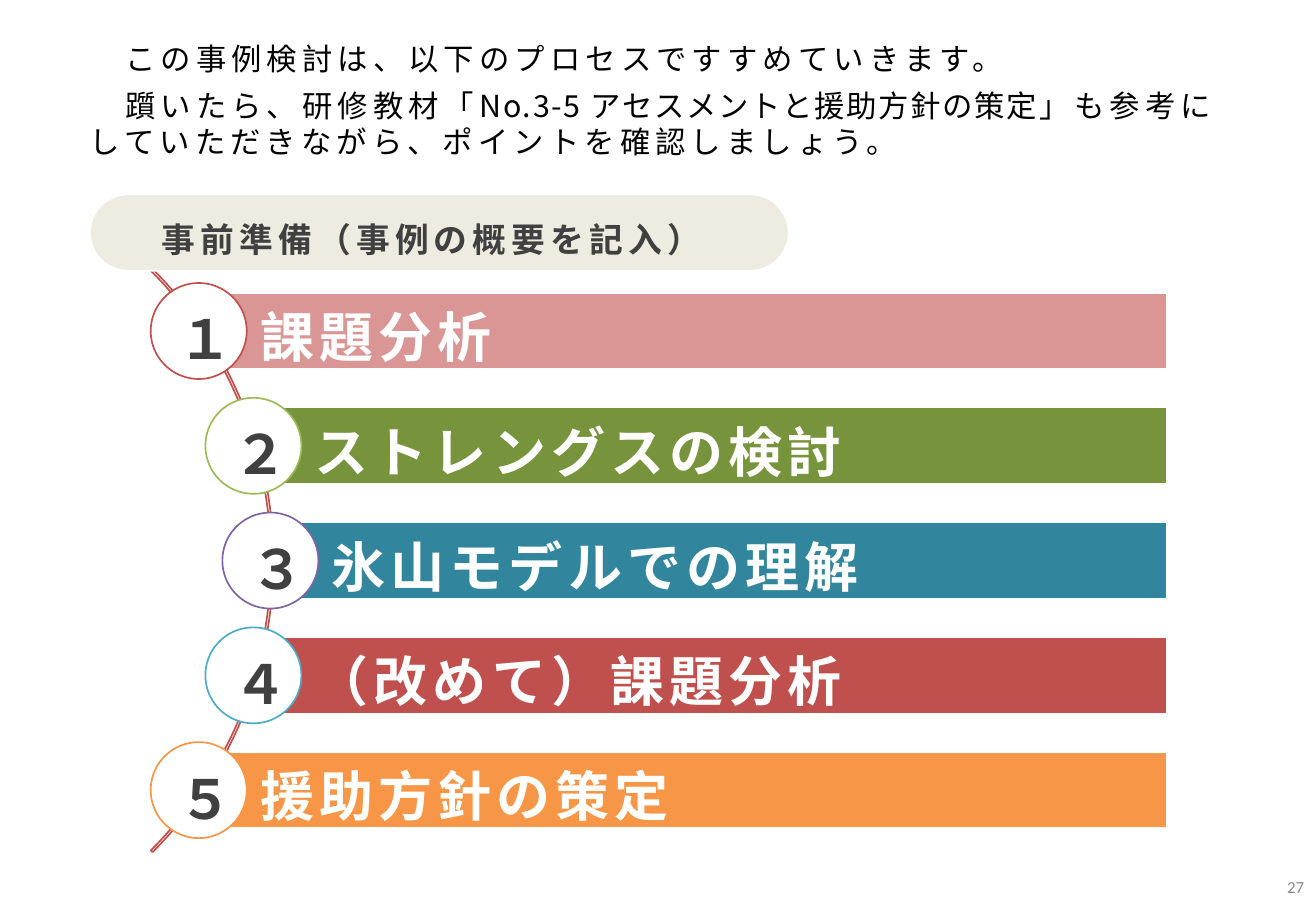
from dataclasses import dataclass

from lxml import etree
from pptx import Presentation
from pptx import util as u
from pptx.dml import color
from pptx.enum import shapes, text
from pptx.oxml import ns


@dataclass(frozen=True)
class Theme:
    japanese: str = "Noto Sans CJK JP"
    latin: str = "Calibri"
    black: str = "000000"
    white: str = "FFFFFF"
    dark: str = "404040"
    grey: str = "898989"
    beige: str = "EEECE1"
    red: str = "C0504D"
    step_size: int = 32
    heading_size: int = 20
    body_size: int = 18
    page_size: int = 10
    wide: int = 3
    narrow: int = 1


THEME = Theme()

INTRO = [
    [("　この事例検討は、以下のプロセスですすめていきます。", THEME.wide)],
    [
        ("　躓いたら、研修教材「", THEME.wide),
        ("No.3-5 アセスメントと援助方針の策定", THEME.narrow),
        ("」も参考にしていただきながら、ポイントを確認しましょう。", THEME.wide),
    ],
]

STEPS = [
    ("１", "課題分析", 1.64, "D99694", THEME.red),
    ("２", "ストレングスの検討", 2.09, "77933C", "9BBB59"),
    ("３", "氷山モデルでの理解", 2.23, "31859C", "8064A2"),
    ("４", "（改めて）課題分析", 2.09, THEME.red, "4BACC6"),
    ("５", "援助方針の策定", 1.64, "F79646", "F79646"),
]

FIRST_TOP, LAST_TOP = 2.41, 6.19
STEP_PITCH = (LAST_TOP - FIRST_TOP) / (len(STEPS) - 1)
BAR_RIGHT, BAR_HEIGHT = 9.6, 0.63
CIRCLE_SIZE = 0.79


def rgb(value):
    return color.RGBColor.from_string(value)


def add_run(paragraph, words, size, ink, bold=False, spacing=0, font=THEME.japanese):
    run = paragraph.add_run()
    run.text = words
    run.font.name = font
    run.font.size = u.Pt(size)
    run.font.bold = bold
    run.font.color.rgb = rgb(ink)
    properties = run._r.get_or_add_rPr()
    properties.set("spc", str(spacing * 100))
    latin = properties.find(ns.qn("a:latin"))
    east_asian = etree.Element(ns.qn("a:ea"), typeface=font)
    latin.addnext(east_asian)


def add_outlined(slide, kind, box, line, fill=None):
    shape = slide.shapes.add_shape(kind, *map(u.Inches, box))
    shape.shadow.inherit = False
    if fill:
        shape.fill.solid()
        shape.fill.fore_color.rgb = rgb(fill)
    else:
        shape.fill.background()
    shape.line.color.rgb = rgb(line)
    shape.line.width = u.Pt(1)
    return shape


def add_banner(slide, kind, box, fill, words, size, ink):
    shape = add_outlined(slide, kind, box, THEME.white, fill)
    frame = shape.text_frame
    frame.word_wrap = True
    frame.vertical_anchor = text.MSO_ANCHOR.MIDDLE
    frame.margin_left, frame.margin_top = u.Inches(0.5), u.Inches(0.24)
    frame.margin_right = frame.margin_bottom = u.Inches(0.09)
    paragraph = frame.paragraphs[0]
    paragraph.alignment = text.PP_ALIGN.LEFT
    paragraph.line_spacing = 0.9
    add_run(paragraph, words, size, ink, True, THEME.wide)
    return shape


def add_text_frame(slide, box, anchor, grow=False):
    frame = slide.shapes.add_textbox(*map(u.Inches, box)).text_frame
    frame.word_wrap = True
    frame.vertical_anchor = anchor
    if grow:
        frame.auto_size = text.MSO_AUTO_SIZE.SHAPE_TO_FIT_TEXT
    return frame


def add_intro(slide):
    frame = add_text_frame(slide, (0.64, 0.28, 9.55, 1.09), text.MSO_ANCHOR.MIDDLE, True)
    for index, parts in enumerate(INTRO):
        paragraph = frame.add_paragraph() if index else frame.paragraphs[0]
        paragraph.space_before = u.Pt(6)
        for words, spacing in parts:
            add_run(paragraph, words, THEME.body_size, THEME.black, spacing=spacing)


def add_process_arc(slide):
    arc = add_outlined(slide, shapes.MSO_SHAPE.BLOCK_ARC, (-4.54, 1.22, 6.79, 6.79), THEME.red)
    for index, value in enumerate((189, 27, 0.003)):
        arc.adjustments[index] = value


def add_step(slide, top, number, words, left, fill, outline):
    bar = (left, top, BAR_RIGHT - left, BAR_HEIGHT)
    add_banner(slide, shapes.MSO_SHAPE.RECTANGLE, bar, fill, words, THEME.step_size, THEME.white)
    circle_left, circle_top = left - 0.4, top - 0.08
    circle = (circle_left, circle_top, CIRCLE_SIZE, CIRCLE_SIZE)
    add_outlined(slide, shapes.MSO_SHAPE.OVAL, circle, outline, THEME.white)
    label = (circle_left + 0.13, circle_top + 0.14, 0.58, 0.64)
    frame = add_text_frame(slide, label, text.MSO_ANCHOR.TOP, True)
    paragraph = frame.paragraphs[0]
    paragraph.alignment = text.PP_ALIGN.CENTER
    add_run(paragraph, number, THEME.step_size, THEME.dark, True, THEME.wide)


def add_preparation(slide):
    pill = add_banner(
        slide, shapes.MSO_SHAPE.ROUNDED_RECTANGLE, (0.74, 1.6, 5.75, BAR_HEIGHT),
        THEME.beige, "事前準備（事例の概要を記入）", THEME.heading_size, THEME.dark,
    )
    pill.adjustments[0] = 0.5


def add_page_number(slide):
    frame = add_text_frame(slide, (10.42, 7.1, 0.41, 0.4), text.MSO_ANCHOR.MIDDLE)
    paragraph = frame.paragraphs[0]
    paragraph.alignment = text.PP_ALIGN.RIGHT
    add_run(paragraph, "27", THEME.page_size, THEME.grey, font=THEME.latin)


def main():
    presentation = Presentation()
    presentation.slide_width = u.Inches(10.83)
    presentation.slide_height = u.Inches(7.5)
    slide = presentation.slides.add_slide(presentation.slide_layouts[6])
    add_page_number(slide)
    add_intro(slide)
    add_process_arc(slide)
    for index, step in enumerate(STEPS):
        add_step(slide, FIRST_TOP + index * STEP_PITCH, *step)
    add_preparation(slide)
    presentation.save("out.pptx")


if __name__ == "__main__":
    main()
